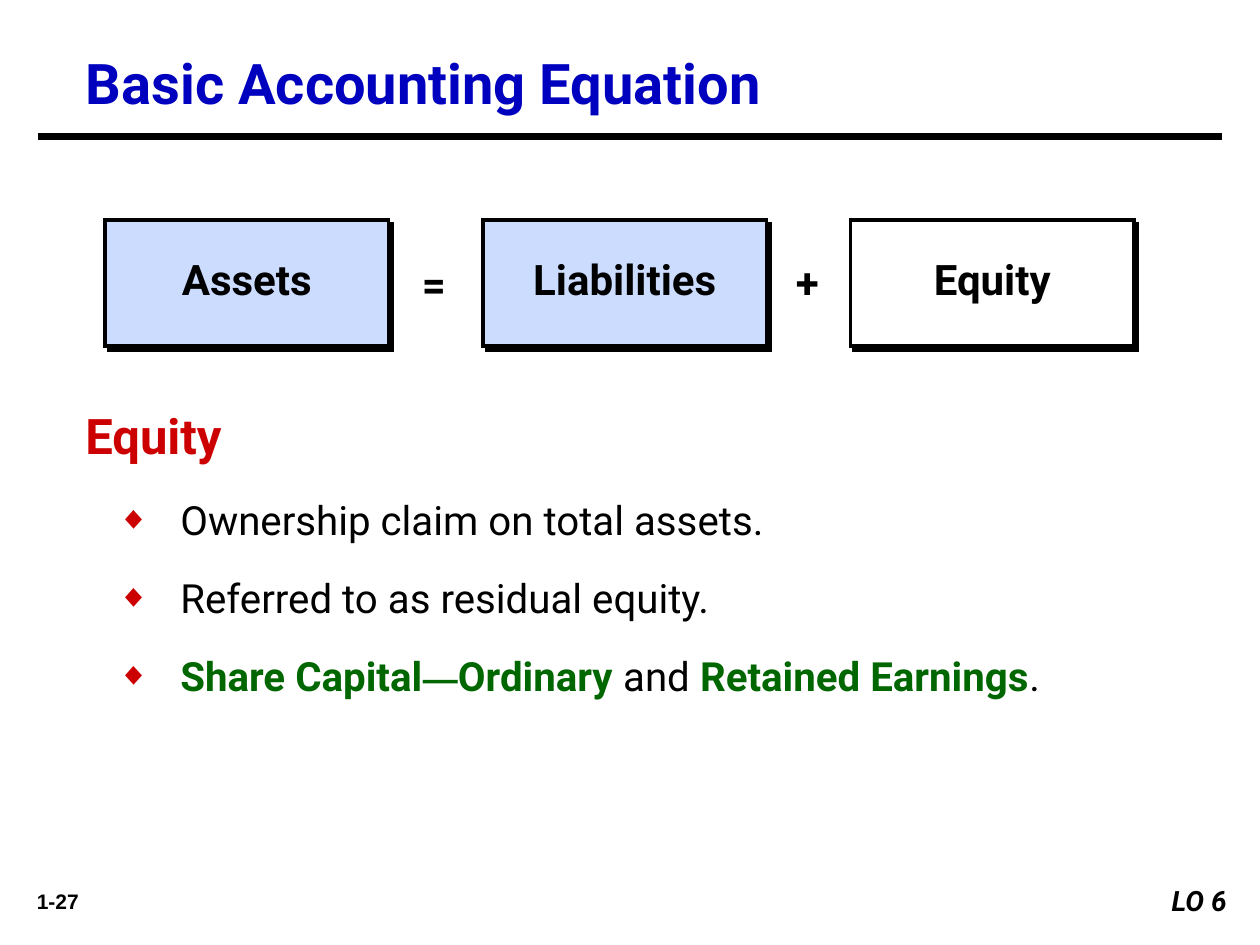
from dataclasses import dataclass

from lxml.etree import SubElement
from pptx import Presentation
from pptx.dml.color import RGBColor
from pptx.enum.shapes import MSO_CONNECTOR, MSO_SHAPE
from pptx.enum.text import MSO_ANCHOR, MSO_AUTO_SIZE, PP_ALIGN
from pptx.oxml.ns import qn
from pptx.util import Emu, Inches, Pt

COLORS = {
    "black": "000000",
    "white": "FFFFFF",
    "title": "0000BF",
    "heading": "CC0000",
    "term": "006600",
    "panel": "CBDCFF",
}
COLS, ROWS = 120, 90
LEFT, CENTER, RIGHT = PP_ALIGN.LEFT, PP_ALIGN.CENTER, PP_ALIGN.RIGHT


@dataclass(frozen=True)
class Area:
    col: float
    row: float
    cols: float
    rows: float


@dataclass(frozen=True)
class Style:
    size: float
    color: str = "black"
    bold: bool = True
    italic: bool = False
    font: str = "Roboto"


@dataclass(frozen=True)
class Label:
    text: str
    area: Area
    style: Style
    align: PP_ALIGN = LEFT


@dataclass(frozen=True)
class Term:
    text: str
    col: float
    fill: str


prs = Presentation()
prs.slide_width, prs.slide_height = Inches(10), Inches(7.5)


def x(cols: float) -> Emu:
    return Emu(round(prs.slide_width * cols / COLS))


def y(rows: float) -> Emu:
    return Emu(round(prs.slide_height * rows / ROWS))


def place(area: Area) -> tuple:
    return x(area.col), y(area.row), x(area.cols), y(area.rows)


def rgb(name: str) -> RGBColor:
    return RGBColor.from_string(COLORS[name])


def add_run(p, text: str, style: Style) -> None:
    r = p.add_run()
    r.text = text
    r.font.name, r.font.size = style.font, Pt(style.size)
    r.font.bold, r.font.italic = style.bold, style.italic
    r.font.color.rgb = rgb(style.color)


def write_label(sp, label: Label) -> None:
    tf = sp.text_frame
    tf.word_wrap, tf.auto_size = True, MSO_AUTO_SIZE.NONE
    tf.vertical_anchor, tf.margin_bottom = MSO_ANCHOR.TOP, 0
    p = tf.paragraphs[0]
    p.alignment = label.align
    add_run(p, label.text, label.style)


def add_label(s, label: Label) -> None:
    write_label(s.shapes.add_textbox(*place(label.area)), label)


def add_title(s, label: Label) -> None:
    sp = s.shapes.title
    sp.left, sp.top, sp.width, sp.height = place(label.area)
    write_label(sp, label)


def add_rectangle(s, area: Area, fill: str):
    sp = s.shapes.add_shape(MSO_SHAPE.RECTANGLE, *place(area))
    sp.fill.solid()
    sp.fill.fore_color.rgb = rgb(fill)
    sp.line.fill.background()
    sp.shadow.inherit = False
    return sp


def add_rule(s, col: float, end_col: float, row: float) -> None:
    line = s.shapes.add_connector(MSO_CONNECTOR.STRAIGHT, x(col), y(row), x(end_col), y(row))
    line.line.color.rgb = rgb("black")
    line.line.width = Pt(4.5)
    line.line._get_or_add_ln().set("cap", "sq")
    SubElement(line._element.spPr, qn("a:effectLst"))


def add_term(s, term: Term) -> None:
    sp = add_rectangle(s, Area(term.col, 21, 27, 12), term.fill)
    sp.line.color.rgb = rgb("black")
    sp.line.width = Pt(2.25)
    SubElement(sp.line._get_or_add_ln(), qn("a:miter"), lim="800000")
    effects = sp._element.spPr.find(qn("a:effectLst"))
    shadow = SubElement(effects, qn("a:outerShdw"), dist=str(Pt(2.8)),
                        dir="2700000", algn="ctr", rotWithShape="0")
    SubElement(shadow, qn("a:srgbClr"), val=COLORS["black"])
    tf = sp.text_frame
    tf.word_wrap, tf.vertical_anchor = True, MSO_ANCHOR.MIDDLE
    tf.margin_left = tf.margin_right = Inches(0.2)
    tf.margin_top, tf.margin_bottom = 0, Inches(0.07)
    p = tf.paragraphs[0]
    p.alignment = CENTER
    add_run(p, term.text, Style(24))


def add_bullets(s, area: Area, items: list) -> None:
    tf = s.shapes.add_textbox(*place(area)).text_frame
    tf.word_wrap = True
    for i, runs in enumerate(items):
        p = tf.add_paragraph() if i else tf.paragraphs[0]
        pPr = p._p.get_or_add_pPr()
        pPr.set("marL", str(Inches(0.75)))
        pPr.set("indent", str(Inches(-0.5)))
        SubElement(SubElement(pPr, qn("a:buClr")), qn("a:srgbClr"), val=COLORS["heading"])
        SubElement(pPr, qn("a:buSzPct"), val="80000")
        SubElement(pPr, qn("a:buFont"), typeface="Arial")
        SubElement(pPr, qn("a:buChar"), char="◆")
        p.level, p.line_spacing = 1, 1.2
        if i:
            p.space_before = Pt(11.5)
        for text, style in runs:
            add_run(p, text, style)


BODY = Style(23, bold=False)
KEY = Style(23, "term")
TITLE = Label("Basic Accounting Equation", Area(6.95, 4, 106, 7.3), Style(32, "title"))
OBJECTIVE = Label("LO 6", Area(108, 83.6, 10, 4.4), Style(16, italic=True), RIGHT)
LABELS = [
    Label("1-27", Area(1, 84, 9, 3.6), Style(12, font="Arial"), CENTER),
    Label("Equity", Area(6.95, 38, 53, 6.1), Style(28, "heading")),
    Label("=", Area(39, 24, 5.8, 6), Style(24)),
    Label("+", Area(74, 23.85, 5.8, 6), Style(24), CENTER),
]
TERMS = [
    Term("Assets", 10, "panel"),
    Term("Liabilities", 46, "panel"),
    Term("Equity", 81, "white"),
]
BULLETS = [
    [("Ownership claim on total assets.", BODY)],
    [("Referred to as residual equity.", BODY)],
    [
        ("Share Capital", KEY),
        ("—", Style(20, "term", font="Arial")),
        ("Ordinary ", KEY),
        ("and ", BODY),
        ("Retained Earnings", KEY),
        (".", BODY),
    ],
]


def main() -> None:
    s = prs.slides.add_slide(prs.slide_layouts[5])
    add_title(s, TITLE)
    add_rule(s, 4, 116, 13)
    for term in TERMS:
        add_term(s, term)
    for label in LABELS:
        add_label(s, label)
    add_bullets(s, Area(7, 45.65, 108, 22.6), BULLETS)
    write_label(add_rectangle(s, OBJECTIVE.area, "white"), OBJECTIVE)
    prs.save("out.pptx")


if __name__ == "__main__":
    main()
